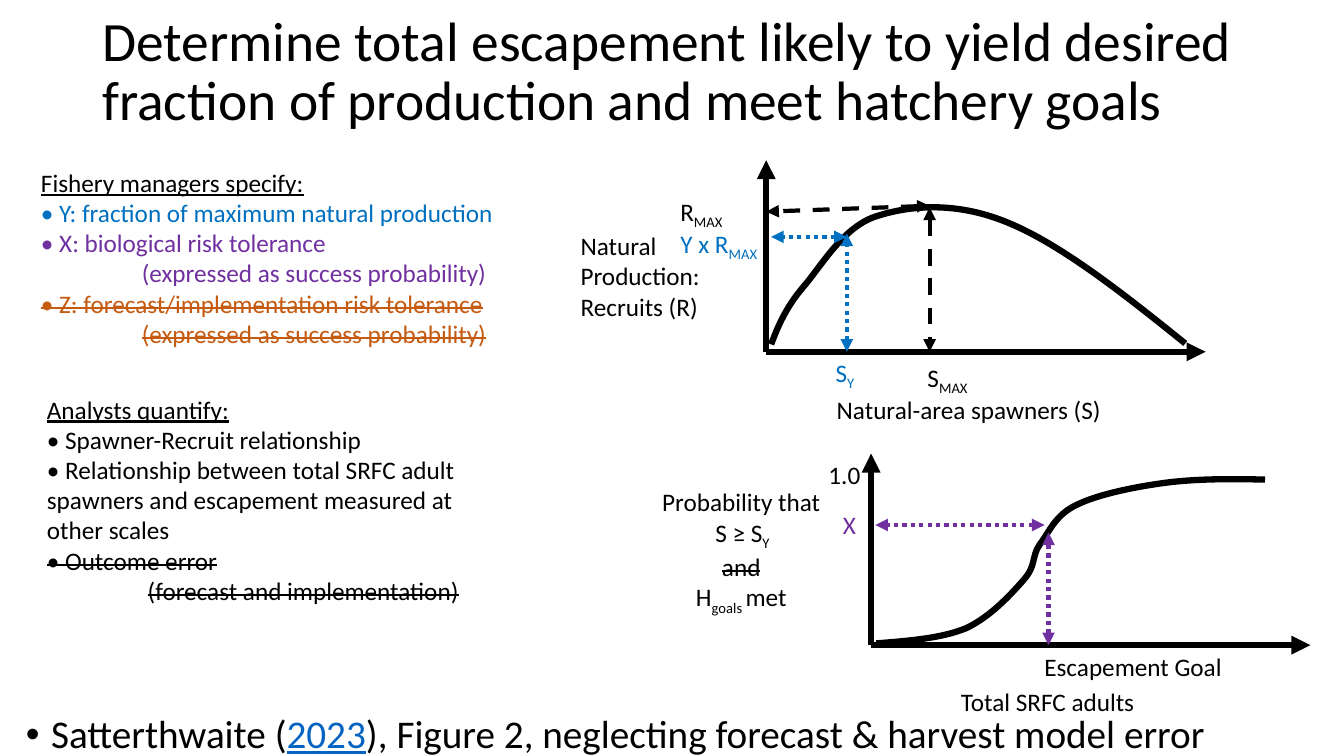
from lxml import etree
from pptx import Presentation
from pptx import util as u
from pptx.dml.color import RGBColor
from pptx.enum import dml, shapes, text
from pptx.oxml import ns

# The slide is a grid of 160 columns by 90 rows
COLUMNS, ROWS = 160, 90
SLIDE_W, SLIDE_H = u.Inches(13.33), u.Inches(7.5)

BLACK = RGBColor(0x00, 0x00, 0x00)
BLUE = RGBColor(0x00, 0x70, 0xC0)
PURPLE = RGBColor(0x70, 0x30, 0xA0)
ORANGE = RGBColor(0xC5, 0x5A, 0x11)
LINK = RGBColor(0x05, 0x63, 0xC1)

SOLID, DASH, DOT = None, dml.MSO_LINE.DASH, dml.MSO_LINE.ROUND_DOT
AXIS_ACROSS, AXIS_UP = 52.3, 22.8
LABEL_ROWS = 4.8
TAB_WIDTH = u.Inches(1)


def col(n):
    return round(SLIDE_W * n / COLUMNS)


def row(n):
    return round(SLIDE_H * n / ROWS)


def add_xml(parent, tag, **attributes):
    return etree.SubElement(parent, ns.qn(tag), attributes)


def write(slide, box, paragraphs, color=BLACK, size=18, wrap=False):
    """Each paragraph is a list of runs: (words, marks, own color)."""
    left, top, width, height = box
    frame = slide.shapes.add_textbox(
        col(left), row(top), col(width), row(height)).text_frame
    frame.word_wrap = wrap
    for i, runs in enumerate(paragraphs):
        paragraph = frame.paragraphs[0] if i == 0 else frame.add_paragraph()
        paragraph._p.get_or_add_pPr().set("defTabSz", str(TAB_WIDTH))
        for words, marks, own_color in runs:
            run = paragraph.add_run()
            run.text = words
            run.font.name = "Calibri"
            run.font.size = u.Pt(size)
            run.font.color.rgb = own_color or color
            run.font.underline = "underline" in marks
            properties = run._r.get_or_add_rPr()
            if "strike" in marks:
                properties.set("strike", "sngStrike")
            if "sub" in marks:
                properties.set("baseline", "-25000")
    return frame


def plain(words, color=None, marks=""):
    return [(words, marks, color)]


def struck_after_tab(words, color=None):
    return [("\t", "", color), (words, "strike", color)]


def label(slide, left, top, width, words, sub="", color=BLACK):
    runs = plain(words) + (plain(sub, marks="sub") if sub else [])
    write(slide, (left, top, width, LABEL_ROWS), [runs], color)


def arrow(slide, start, end, color=BLACK, width=3, dash=SOLID, both=True):
    line = slide.shapes.add_connector(
        shapes.MSO_CONNECTOR.STRAIGHT,
        col(start[0]), row(start[1]), col(end[0]), row(end[1]))
    line.line.color.rgb = color
    line.line.width = u.Pt(width)
    if dash:
        line.line.dash_style = dash
    stroke = line.line._get_or_add_ln()
    if both:
        add_xml(stroke, "a:headEnd", type="triangle")
    add_xml(stroke, "a:tailEnd", type="triangle")
    add_xml(line._element.spPr, "a:effectLst")


def axes(slide, x, y):
    for end in ((x + AXIS_ACROSS, y), (x, y - AXIS_UP)):
        arrow(slide, (x, y), end, width=4.5, both=False)


def curve(slide, start, crest, *segments):
    """Rise from start to the crest row; a segment is two controls and an end."""
    left, top = col(start[0]), row(crest)
    builder = slide.shapes.build_freeform(left, row(start[1]))
    # One line spans the outline's box, then Bezier segments take its place
    builder.add_line_segments([(col(segments[-1][-1][0]), top)], close=False)
    trace = builder.convert_to_shape()
    outline = next(trace._element.iter(ns.qn("a:path")))
    outline.remove(outline.find(ns.qn("a:lnTo")))
    for segment in segments:
        bezier = add_xml(outline, "a:cubicBezTo")
        for x, y in segment:
            add_xml(bezier, "a:pt", x=str(col(x) - left), y=str(row(y) - top))
    trace.shadow.inherit = False
    trace.fill.background()
    trace.line.color.rgb = BLACK
    trace.line.width = u.Pt(4.5)


def headings(slide):
    title = write(slide, (11, 0, 138, 17.4), [plain(
        "Determine total escapement likely to yield desired "
        "fraction of production and meet hatchery goals")], size=39.6, wrap=True)
    title.vertical_anchor = text.MSO_ANCHOR.MIDDLE
    title.paragraphs[0].line_spacing = 0.9

    citation = write(slide, (1.9, 84.5, 158.1, 8), [[
        ("Satterthwaite (", "", None), ("2023", "underline", LINK),
        ("), Figure 2, neglecting forecast & harvest model error", "", None),
    ]], size=28, wrap=True).paragraphs[0]
    citation.line_spacing = 0.9
    citation.space_before = u.Pt(10)
    properties = citation._p.get_or_add_pPr()
    properties.set("marL", str(u.Inches(0.25)))
    properties.set("indent", str(-u.Inches(0.25)))
    add_xml(properties, "a:buFont", typeface="Arial")
    add_xml(properties, "a:buChar", char="•")


def role_lists(slide):
    write(slide, (3.7, 19.3, 57, 26.6), [
        plain("Fishery managers specify:", marks="underline"),
        plain("• Y: fraction of maximum natural production", BLUE),
        plain("• X: biological risk tolerance", PURPLE),
        plain("\t(expressed as success probability)", PURPLE),
        plain("• Z: forecast/implementation risk tolerance", ORANGE, "strike"),
        struck_after_tab("(expressed as success probability)", ORANGE),
    ], wrap=True)
    write(slide, (4.4, 46.3, 54.2, 30.2), [
        plain("Analysts quantify:", marks="underline"),
        plain("• Spawner-Recruit relationship"),
        plain("• Relationship between total SRFC adult spawners "
              "and escapement measured at other scales"),
        plain("• Outcome error", marks="strike"),
        struck_after_tab("(forecast and implementation)"),
    ], wrap=True)


def production_plot(slide):
    left, base, s_y, s_max = 91.22, 41.88, 100.82, 110.67
    axes(slide, left, base)
    curve(slide, (91.8, 41), 24.7,
          ((92.6, 38.9), (93.5, 36.7), (95.6, 34.2)),
          ((97.8, 31.7), (100.4, 26.9), (104.5, 25.7)),
          ((108.6, 24.4), (114.1, 24), (120.2, 26.6)),
          ((126.4, 29.2), (133.8, 35), (141.1, 40.9)))
    arrow(slide, (s_max, 24.7), (s_max, base), dash=DASH)
    arrow(slide, (s_max, 24.5), (left, 25.2), dash=DASH)
    arrow(slide, (s_y, 28.2), (91.8, 28.2), BLUE, dash=DOT)
    arrow(slide, (s_y, base), (s_y, 27.8), BLUE, dash=DOT)
    write(slide, (67.94, 26.85, 16.8, 12.1),
          [plain("Natural"), plain("Production:"), plain("Recruits (R)")])
    label(slide, 98.43, 46.3, 34.2, "Natural-area spawners (S)")
    label(slide, 109.23, 42.5, 7.8, "S", "MAX")
    label(slide, 79.8, 22.8, 8, "R", "MAX")
    label(slide, 79.82, 26.6, 12.2, "Y x R", "MAX", BLUE)
    label(slide, 98.3, 41.9, 4.8, "S", "Y", BLUE)


def probability_plot(slide):
    left, base, goal = 103.7, 76.8, 124.83
    axes(slide, left, base)
    curve(slide, (104.3, 76.6), 57.1,
          ((108.1, 76.3), (112.1, 76), (115, 74.8)),
          ((118, 73.4), (120.5, 70.6), (121.9, 69)),
          ((123.4, 67.3), (122.8, 66.2), (123.8, 64.8)),
          ((124.9, 63.4), (125.6, 61.3), (128.2, 60.1)),
          ((130.6, 58.9), (134.9, 58), (138.6, 57.5)),
          ((142.3, 57), (146.4, 57), (150.6, 57.1)))
    arrow(slide, (124.35, 62.5), (104.2, 62.5), PURPLE, dash=DOT)
    arrow(slide, (goal, base), (goal, 63.4), PURPLE, dash=DOT)
    condition = write(slide, (77.65, 57.35, 21.5, 15.7), [
        plain("Probability that"),
        plain(" S ≥ S") + plain("Y ", marks="sub"),
        plain("and", marks="strike"),
        plain("H") + plain("goals ", marks="sub") + plain("met"),
    ])
    for paragraph in condition.paragraphs[1:]:
        paragraph.alignment = text.PP_ALIGN.CENTER
    label(slide, 97.45, 54.1, 6.2, "1.0")
    label(slide, 99.15, 60, 4, "X", color=PURPLE)
    label(slide, 123.15, 77, 23.8, "Escapement Goal")
    label(slide, 113.2, 81.1, 23.3, "Total SRFC adults")


def main():
    deck = Presentation()
    deck.slide_width, deck.slide_height = SLIDE_W, SLIDE_H
    slide = deck.slides.add_slide(deck.slide_layouts[6])
    headings(slide)
    role_lists(slide)
    production_plot(slide)
    probability_plot(slide)
    deck.save("out.pptx")


if __name__ == "__main__":
    main()
